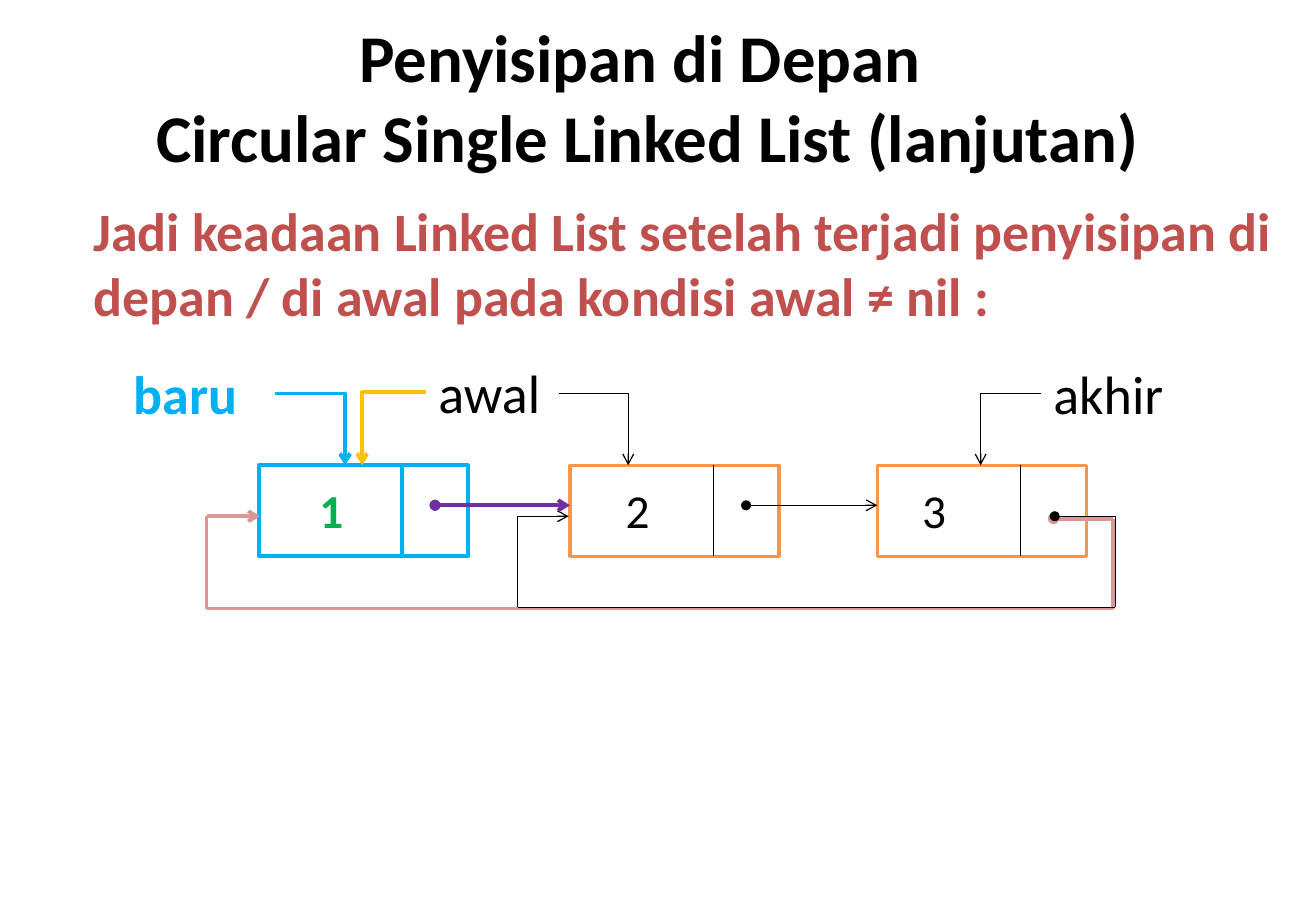
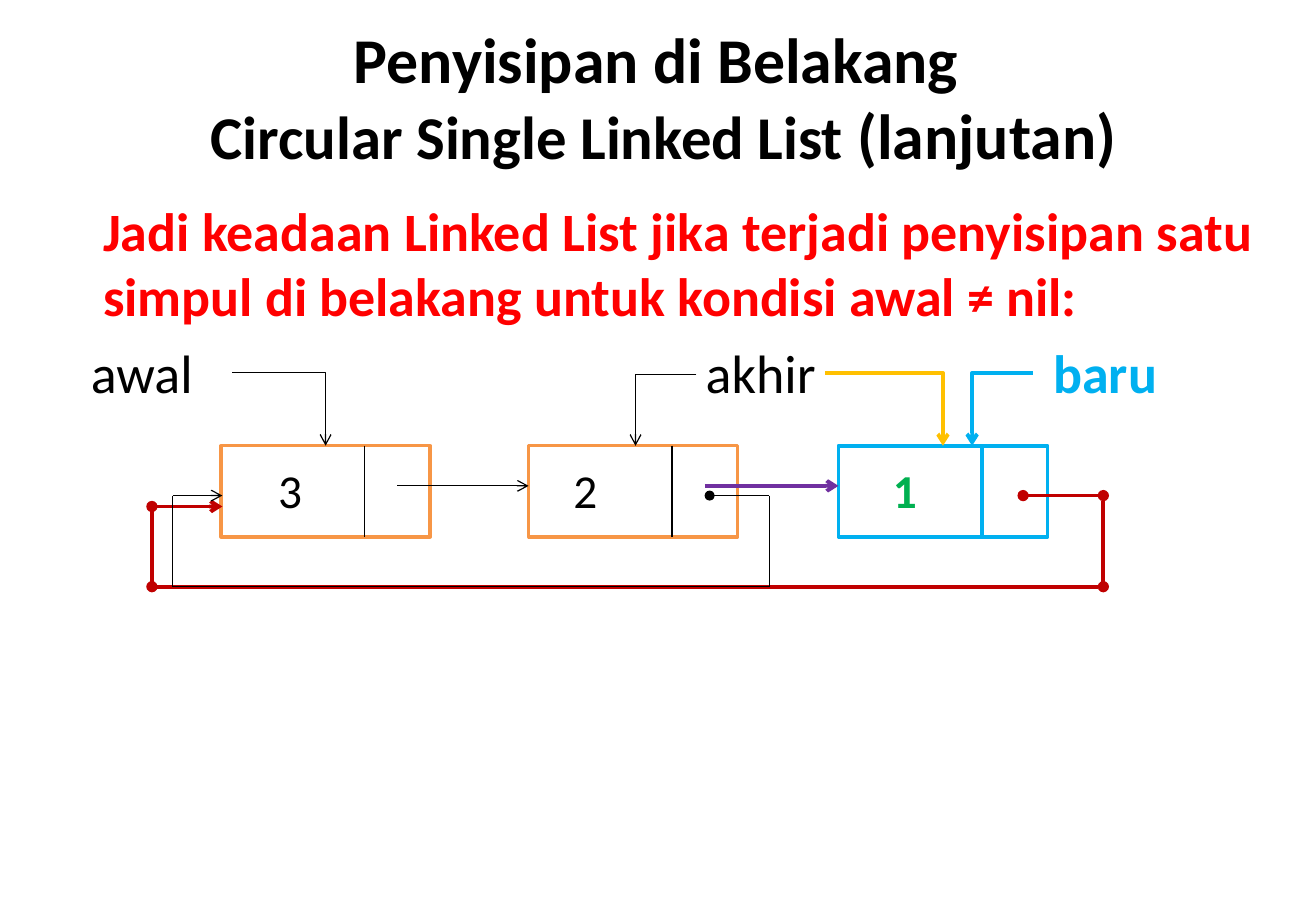
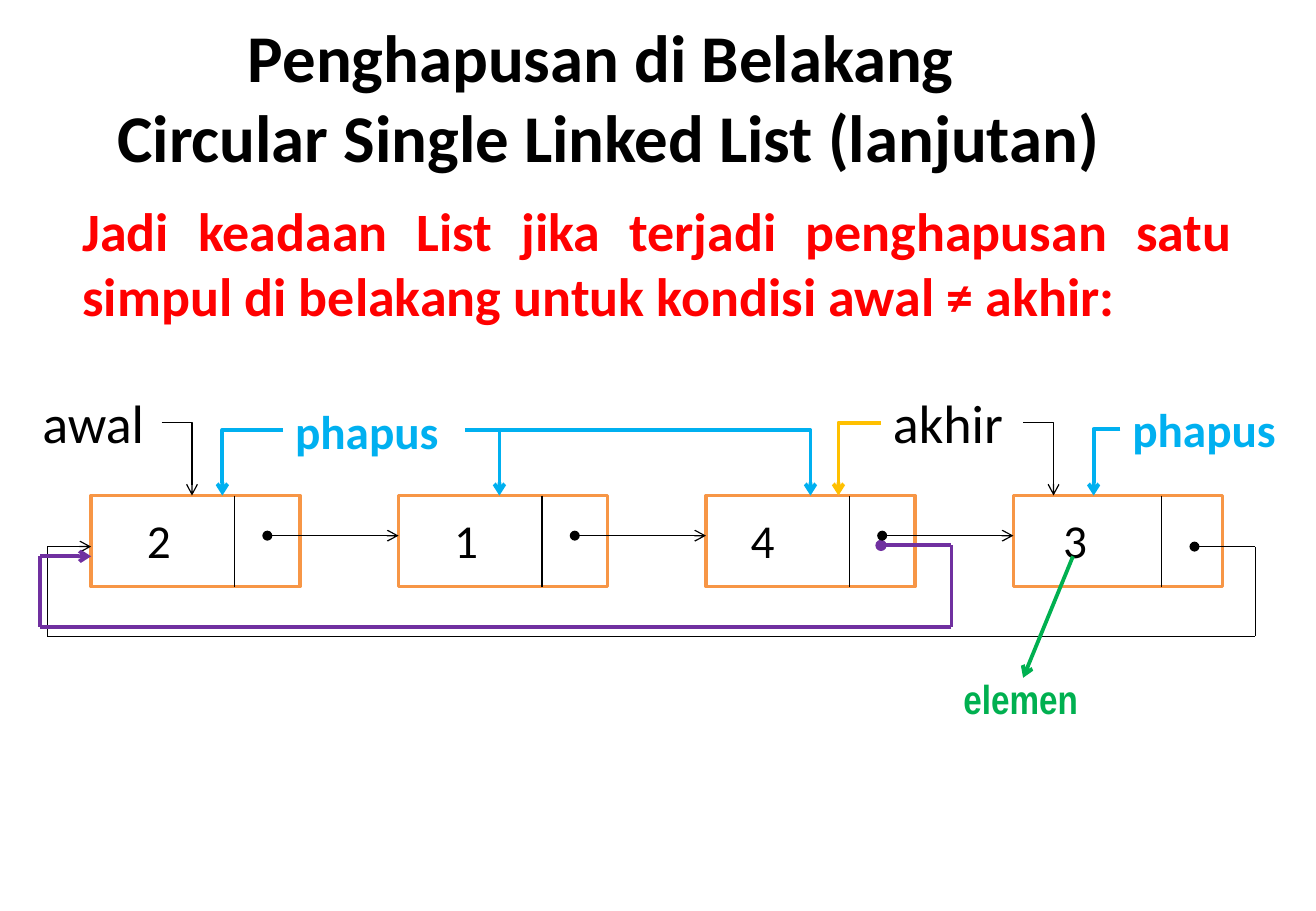
from dataclasses import dataclass

import pptx
import pptx.util
import pptx.dml.color
import pptx.enum.shapes
import pptx.enum.text
import pptx.oxml
import pptx.oxml.ns
from lxml import etree

PX = 9144
ALIGN = pptx.enum.text.PP_ALIGN
ANCHOR = pptx.enum.text.MSO_ANCHOR
CONNECTOR = pptx.enum.shapes.MSO_CONNECTOR


@dataclass(frozen=True)
class Theme:
    font: str = "Calibri"
    narrow: str = "Arial Narrow"
    black: str = "000000"
    white: str = "FFFFFF"
    brick: str = "C0504D"
    red: str = "FF0000"
    crimson: str = "C00000"
    pink: str = "D99694"
    orange: str = "F79646"
    amber: str = "FFC000"
    blue: str = "00B0F0"
    green: str = "00B050"
    purple: str = "7030A0"
    title: float = 39.6
    title_small: float = 37.8
    subtitle_small: float = 36
    body: float = 32
    label: float = 32
    number: float = 28
    element: float = 24
    thin: float = 0.75
    frame: float = 2
    thick: float = 2.25


T = Theme()
NODE_W, NODE_H, LINK_X, LINK_Y = 172, 75, 145, 33


def emu(*lengths):
    return [pptx.util.Emu(n * PX) for n in lengths]


def rgb(color):
    return pptx.dml.color.RGBColor.from_string(color)


def weight(color):
    return T.thin if color == T.black else T.thick


def write(p, text, size=T.body, color=T.black, bold=False, font=T.font, align=ALIGN.LEFT):
    p.alignment = align
    for i, part in enumerate(text.split("\n")):
        if i:
            p.add_line_break()
            br = p._p.findall(pptx.oxml.ns.qn("a:br"))[-1]
            etree.SubElement(br, pptx.oxml.ns.qn("a:rPr"), sz=str(round(size * 100)))
        if part:
            r = p.add_run()
            r.text = part
            r.font.name, r.font.size = font, pptx.util.Pt(size)
            r.font.bold, r.font.color.rgb = bold, rgb(color)


def text_box(s, x, y, w, h, text, **fmt):
    tf = s.shapes.add_textbox(*emu(x, y, w, h)).text_frame
    tf.word_wrap = True
    write(tf.paragraphs[0], text, **fmt)


def line(s, x1, y1, x2, y2, color, head=None, tail=None, bent=False):
    kind = CONNECTOR.ELBOW if bent else CONNECTOR.STRAIGHT
    sp = s.shapes.add_connector(kind, *emu(x1, y1, x2, y2))
    sp.line.color.rgb = rgb(color)
    sp.line.width = pptx.util.Pt(weight(color))
    pr = sp._element.spPr
    if bent:
        pr.find(pptx.oxml.ns.qn("a:prstGeom")).set("prst", "bentConnector2")
        if x2 < x1:
            xfrm = pr.find(pptx.oxml.ns.qn("a:xfrm"))
            xfrm.attrib.pop("flipH")
            xfrm.set("rot", "10800000")
            xfrm.set("flipV", "1")
    ln = sp.line._get_or_add_ln()
    for tag, end in (("a:headEnd", head), ("a:tailEnd", tail)):
        if end:
            etree.SubElement(ln, pptx.oxml.ns.qn(tag), type=end)
    etree.SubElement(pr, pptx.oxml.ns.qn("a:effectLst"))


def node(s, x, y, number, number_x, new=False, divider=118):
    sp = s.shapes.add_shape(pptx.enum.shapes.MSO_SHAPE.RECTANGLE, *emu(x, y, NODE_W, NODE_H))
    sp.shadow.inherit = False
    sp.fill.solid()
    sp.fill.fore_color.rgb = rgb(T.white)
    sp.line.color.rgb = rgb(T.blue if new else T.orange)
    sp.line.width = pptx.util.Pt(T.thick if new else T.frame)
    line(s, x + divider, y, x + divider, y + NODE_H, T.blue if new else T.black)
    text_box(s, x + number_x, y + 8, 63, 57, number, size=T.number,
             color=T.green if new else T.black, bold=new)


def return_loop(s, x, y, color, start, right, bottom, left, end, joints=False):
    points = [start, (right, start[1]), (right, bottom), (left, bottom), (left, end[1]), end]
    for i, ((x1, y1), (x2, y2)) in enumerate(zip(points, points[1:])):
        line(s, x + x1, y + y1, x + x2, y + y2, color,
             head="oval" if joints or i == 0 else None,
             tail="arrow" if i == len(points) - 2 else None)


def linked_list(s, x, y, nodes, links, loops, pointers, labels, link_head="oval"):
    for node_x, number, number_x, *options in nodes:
        node(s, x + node_x, y, number, number_x, *options)
    for loop in loops:
        return_loop(s, x, y, *loop)
    for a, b, color in zip(nodes, nodes[1:], links):
        line(s, x + a[0] + LINK_X, y + LINK_Y, x + b[0], y + LINK_Y, color,
             head=link_head, tail="arrow")
    for x1, y1, x2, color in pointers:
        line(s, x + x1, y + y1, x + x2, y, color, tail="arrow", bent=True)
    for dx, dy, text, fmt in labels:
        text_box(s, x + dx, y + dy, 150, 64, text, **fmt)


def list_slide(prs, title_x, title, body_box, body, body_color, body_align):
    s = prs.slides.add_slide(prs.slide_layouts[5])
    sp = s.shapes.title
    sp.left, sp.top, sp.width, sp.height = emu(title_x, 25, 966, 108)
    tf = sp.text_frame
    tf.auto_size = pptx.enum.text.MSO_AUTO_SIZE.NONE
    tf.vertical_anchor = ANCHOR.MIDDLE
    for text, size in title:
        write(tf.paragraphs[0], text, size=size, bold=True, align=ALIGN.CENTER)
    text_box(s, *body_box, body, color=body_color, bold=True, align=body_align)
    return s


def main():
    prs = pptx.Presentation()
    prs.slide_width, prs.slide_height = emu(1083, 750)
    plain = dict(size=T.label)
    new = dict(size=T.label, color=T.blue, bold=True)
    removed = dict(size=T.number, color=T.blue, bold=True)
    element = dict(size=T.element, color=T.green, bold=True, font=T.narrow)

    s = list_slide(
        prs, 50, [("Penyisipan di Depan \nCircular Single Linked List (lanjutan)", T.title)],
        (67, 158, 992, 75),
        "Jadi keadaan Linked List setelah terjadi penyisipan di depan / di awal "
        "pada kondisi awal ≠ nil :", T.brick, ALIGN.LEFT)
    linked_list(
        s, 213, 383,
        nodes=[(0, "1", 40, True), (256, "2", 36), (509, "3", 27)],
        links=[T.purple, T.black],
        loops=[(T.pink, (654, 44), 703, 118, -43, (1, 42)),
               (T.black, (655, 42), 705, 117, 213, (255, 42))],
        pointers=[(644, -59, 594, T.black), (13, -59, 71, T.blue),
                  (138, -60, 85, T.amber), (247, -59, 304, T.black)],
        labels=[(-113, -91, "baru", new), (138, -92, "awal", plain), (644, -91, "akhir", plain)])

    s = list_slide(
        prs, 63, [("Penyisipan di Belakang \n", T.title_small),
                  ("Circular Single Linked List ", T.subtitle_small),
                  ("(lanjutan)", T.title_small)],
        (75, 158, 967, 108),
        "Jadi keadaan Linked List jika terjadi penyisipan satu simpul di belakang "
        "untuk kondisi awal ≠ nil:", T.red, ALIGN.JUSTIFY)
    linked_list(
        s, 182, 367,
        nodes=[(0, "3", 37), (253, "2", 27), (508, "1", 35, True)],
        links=[T.black, T.purple],
        loops=[(T.crimson, (660, 41), 726, 116, -57, (1, 50), True),
               (T.black, (402, 41), 451, 116, -40, (1, 41))],
        pointers=[(497, -60, 594, T.amber), (391, -59, 341, T.black),
                  (9, -60, 86, T.black), (668, -60, 618, T.blue)],
        labels=[(389, -92, "akhir", plain), (-117, -92, "awal", plain), (675, -92, "baru", new)],
        link_head=None)

    s = list_slide(
        prs, 18, [("Penghapusan di Belakang \nCircular Single Linked List (lanjutan)", T.title)],
        (58, 158, 967, 117),
        "Jadi keadaan List jika terjadi penghapusan satu simpul di belakang "
        "untuk kondisi awal ≠ akhir:", T.red, ALIGN.JUSTIFY)
    x, y = 75, 408
    linked_list(
        s, x, y,
        nodes=[(0, "2", 36), (253, "1", 36), (506, "4", 27), (759, "3", 31, False, 122)],
        links=[T.black] * 3,
        loops=[(T.black, (908, 42), 958, 116, -36, (0, 42)),
               (T.purple, (650, 41), 708, 108, -42, (0, 50))],
        pointers=[(650, -60, 615, T.amber), (767, -60, 792, T.black),
                  (-75 + 133, -60, 83, T.black), (158, -54, 108, T.blue),
                  (308, -54, 336, T.blue), (308, -54, 592, T.blue),
                  (847, -55, 825, T.blue)],
        labels=[(-50, -92, "awal", plain), (650, -92, "akhir", plain),
                (158, -82, "phapus", removed), (847, -83, "phapus", removed),
                (708, 142, "elemen", element)])
    line(s, x + 808, y + 50, x + 767, y + 150, T.green, tail="arrow")

    prs.save("out.pptx")


if __name__ == "__main__":
    main()
